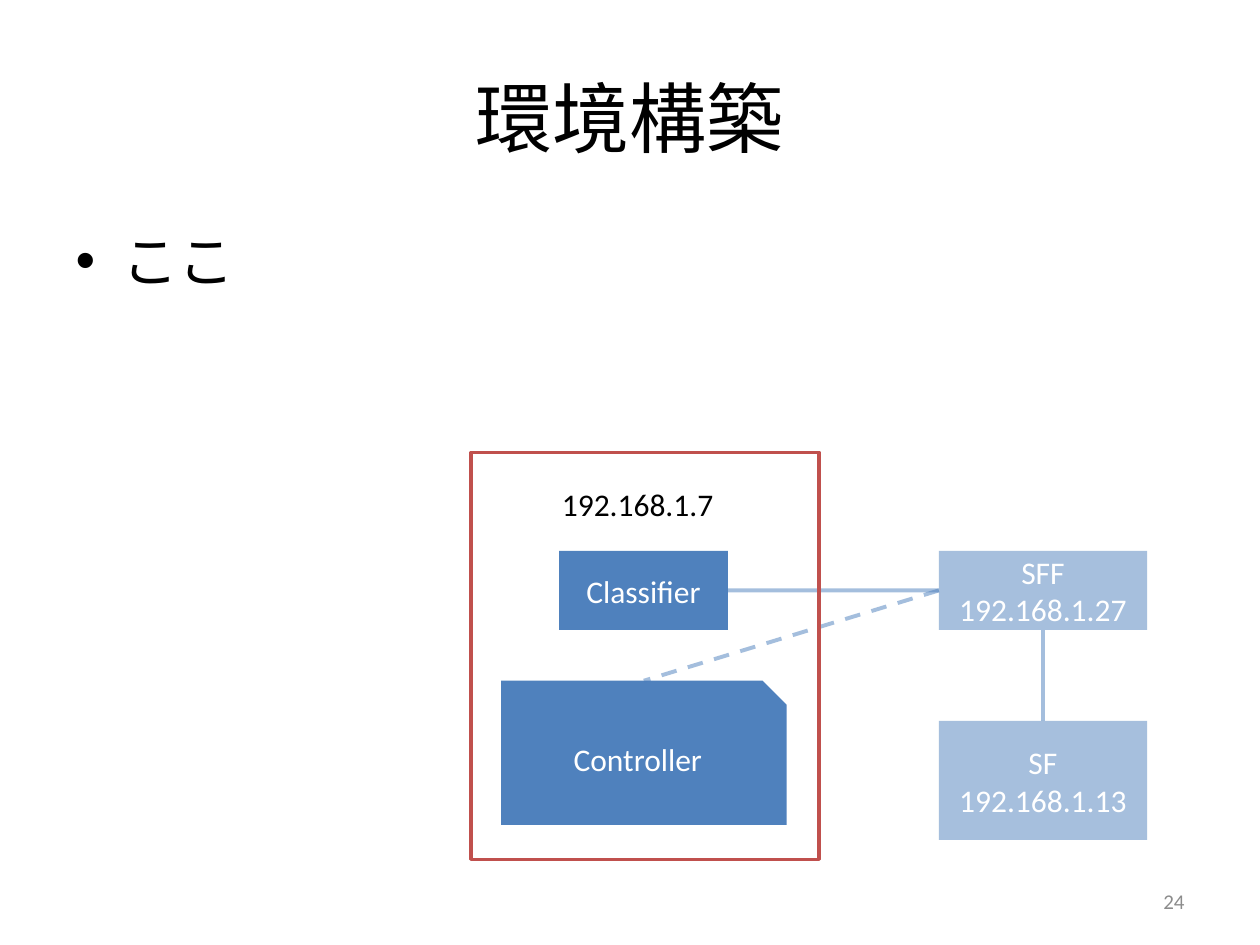
from pptx import Presentation
from pptx.dml.color import RGBColor
from pptx.enum.dml import MSO_LINE_DASH_STYLE as Dash
from pptx.enum.shapes import MSO_CONNECTOR, MSO_SHAPE as Shape
from pptx.enum.text import MSO_ANCHOR as Anchor, MSO_AUTO_SIZE as AutoSize, PP_ALIGN as Align
from pptx.oxml.ns import qn
from pptx.util import Pt
from lxml.etree import SubElement

# Content
TITLE = "環境構築"
BULLETS = ["ここ"]
PAGE_NUMBER = "24"
HOST_ADDRESS = "192.168.1.7"
FONT = "Calibri"
BLUE, LINE_BLUE, RED = "4F81BD", "4B7EBC", "C0504D"
BLACK, WHITE, GREY = "000000", "FFFFFF", "8C8C8C"

# name: (lines, shape, (left, top, width, height), opacity in percent)
NODES = {
    "SF": (["SF", "192.168.1.13"], Shape.RECTANGLE, (536.5, 412, 119, 68), 50),
    "SFF": (["SFF", "192.168.1.27"], Shape.RECTANGLE, (536.5, 314.8, 119, 45.2), 50),
    "Classifier": (["Classifier"], Shape.RECTANGLE, (319.5, 314.8, 96.5, 45.2), 100),
    "Controller": (["Controller"], Shape.SNIP_1_RECTANGLE, (286.3, 389, 163.2, 82.3), 100),
}
TOP, LEFT, BOTTOM, RIGHT = range(4)
# from node, its side, to node, its side, dash
LINKS = [
    ("Classifier", RIGHT, "SFF", LEFT, Dash.SOLID),
    ("SFF", BOTTOM, "SF", TOP, Dash.SOLID),
    ("SFF", LEFT, "Controller", TOP, Dash.DASH),
]
HOST_FRAME = (269.2, 258.6, 199, 232.5)


def color(hex_value):
    return RGBColor.from_string(hex_value)


def points(box):
    return [Pt(value) for value in box]


def write(shape, lines, size, hex_value, align=None, anchor=None):
    frame = shape.text_frame
    frame.text = "\n".join(lines)
    frame.vertical_anchor = anchor
    for paragraph in frame.paragraphs:
        paragraph.alignment = align
        for run in paragraph.runs:
            run.font.name = FONT
            run.font.size = Pt(size)
            run.font.color.rgb = color(hex_value)


def set_opacity(shape, percent):
    for paint in shape.element.spPr.iter(qn("a:srgbClr")):
        SubElement(paint, qn("a:alpha"), val=str(percent * 1000))


def place(shape, box):
    shape.left, shape.top, shape.width, shape.height = points(box)


prs = Presentation()
prs.slide_width, prs.slide_height = Pt(720), Pt(540)
slide = prs.slides.add_slide(prs.slide_layouts[1])
shapes = slide.shapes

# Title, list and page number
title, body = slide.placeholders
place(title, (36, 21.6, 648, 90))
write(title, [TITLE], 44, BLACK, Align.CENTER, Anchor.MIDDLE)
place(body, (36, 126, 648, 356.4))
write(body, BULLETS, 32, BLACK)
page_number = shapes.add_textbox(*points((516, 500.5, 168, 28.8)))
page_number.text_frame.word_wrap = True
write(page_number, [PAGE_NUMBER], 12, GREY, Align.RIGHT, Anchor.MIDDLE)

# Nodes
nodes = {}
for name, (lines, kind, box, opacity) in NODES.items():
    node = nodes[name] = shapes.add_shape(kind, *points(box))
    node.shadow.inherit = False
    node.fill.solid()
    node.fill.fore_color.rgb = color(BLUE)
    node.line.fill.background()
    if opacity < 100:
        set_opacity(node, opacity)
    write(node, lines, 18, WHITE, Align.CENTER, Anchor.MIDDLE)

# Links
for start, start_side, end, end_side, dash in LINKS:
    link = shapes.add_connector(MSO_CONNECTOR.STRAIGHT, 0, 0, 0, 0)
    link.begin_connect(nodes[start], start_side)
    link.end_connect(nodes[end], end_side)
    link.line.color.rgb = color(LINE_BLUE)
    link.line.width = Pt(2.25)
    link.line.dash_style = dash
    set_opacity(link, 50)
    SubElement(link.element.spPr, qn("a:effectLst"))

# Host frame and its address
host = shapes.add_shape(Shape.RECTANGLE, *points(HOST_FRAME))
host.shadow.inherit = False
host.fill.background()
host.line.color.rgb = color(RED)
host.line.width = Pt(2)
address = shapes.add_textbox(*points((314, 273.8, 102.2, 29)))
address.text_frame.word_wrap = False
address.text_frame.auto_size = AutoSize.SHAPE_TO_FIT_TEXT
write(address, [HOST_ADDRESS], 18, BLACK)

prs.save("out.pptx")
